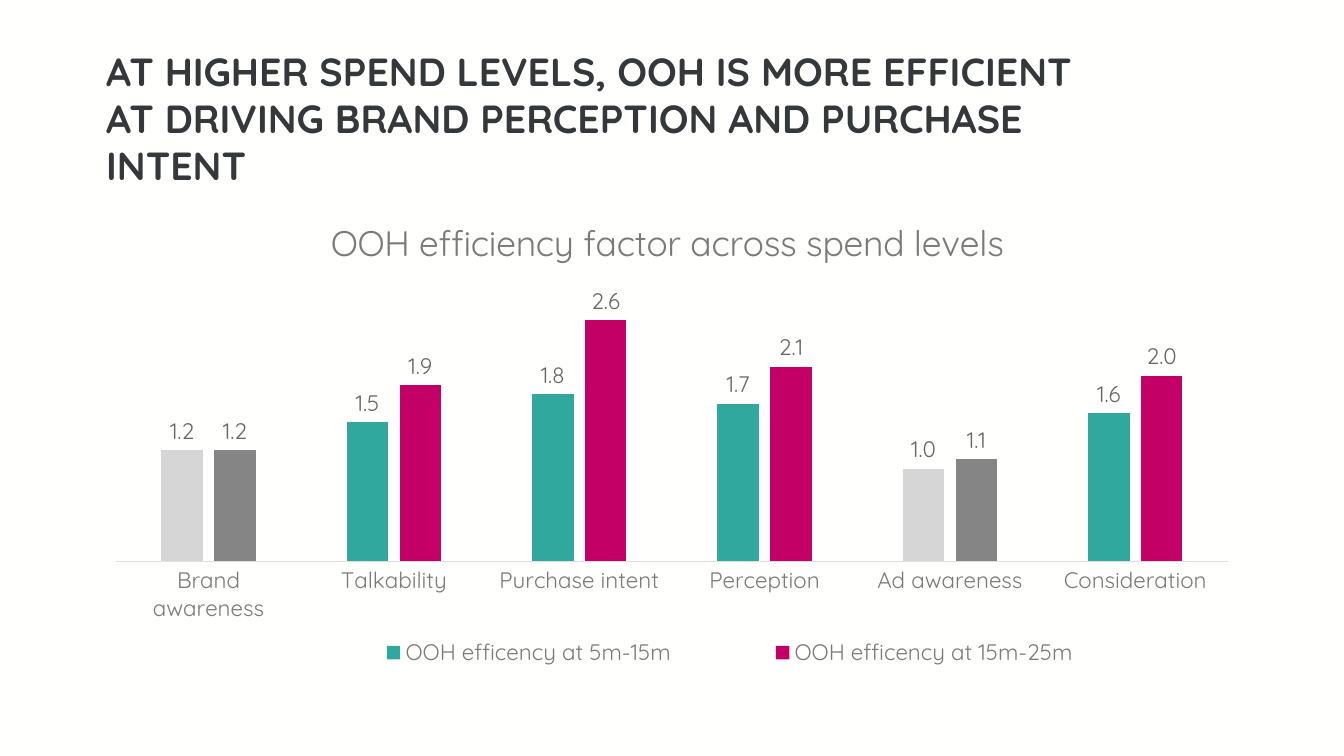
import pptx
import pptx.chart.data
import pptx.dml.color
import pptx.enum.chart
import pptx.enum.text
import pptx.oxml
import pptx.oxml.ns
import pptx.util

Inches = pptx.util.Inches

COLORS = {
    "background": "FFFFFE",
    "heading": "34383A",
    "text": "7A7A7A",
    "label": "666666",
    "axis": "E0E0E0",
    "teal": "31A89E",
    "magenta": "C20066",
    "light": "D6D6D6",
    "dark": "858585",
}
CATEGORIES = ["Brand awareness", "Talkability", "Purchase intent",
              "Perception", "Ad awareness", "Consideration"]
MUTED_POINTS = (0, 4)
SERIES = [
    ("OOH efficency at 5m-15m", [1.2, 1.5, 1.8, 1.7, 1.0, 1.6], "teal", "light"),
    ("OOH efficency at 15m-25m", [1.2, 1.9, 2.6, 2.1, 1.1, 2.0], "magenta", "dark"),
]


class SlideBuilder:
    """Holds the style and the current slide, and adds each kind of element."""

    def __init__(self, slide, typeface):
        self.slide = slide
        self.typeface = typeface

    def apply(self, target, values):
        for name, value in values.items():
            setattr(target, name, value)

    def rgb(self, color):
        return pptx.dml.color.RGBColor.from_string(COLORS[color])

    def fill(self, target, color):
        target.solid()
        target.fore_color.rgb = self.rgb(color)

    def style(self, font, size, color, bold=False):
        self.apply(font, {"name": self.typeface, "size": pptx.util.Pt(size), "bold": bold})
        font.color.rgb = self.rgb(color)

    def title(self, text, left, top, width, height):
        box = self.slide.shapes.title
        self.apply(box, {"left": Inches(left), "top": Inches(top),
                         "width": Inches(width), "height": Inches(height)})
        frame = box.text_frame
        frame.text = text
        self.apply(frame, {"word_wrap": True,
                           "auto_size": pptx.enum.text.MSO_AUTO_SIZE.NONE,
                           "vertical_anchor": pptx.enum.text.MSO_ANCHOR.TOP})
        para = frame.paragraphs[0]
        para.alignment = pptx.enum.text.PP_ALIGN.LEFT
        self.style(para.runs[0].font, 21, "heading", True)

    def place(self, chart, part, index, **position):
        element = chart.element.xpath(f"c:chart//c:{part}")[0]
        for old in element.xpath("c:layout"):
            element.remove(old)
        target = '<c:layoutTarget val="inner"/>' if part == "plotArea" else ""
        modes = "".join(f'<c:{axis}Mode val="edge"/>' for axis in "xy")
        values = "".join(f'<c:{name} val="{value}"/>' for name, value in position.items())
        element.insert(index, pptx.oxml.parse_xml(
            f'<c:layout {pptx.oxml.ns.nsdecls("c")}><c:manualLayout>'
            f"{target}{modes}{values}</c:manualLayout></c:layout>"))

    def column_chart(self, title, left, top, width, height):
        data = pptx.chart.data.CategoryChartData(number_format="0.0")
        data.categories = CATEGORIES
        for name, values, color, muted in SERIES:
            data.add_series(name, values)
        chart = self.slide.shapes.add_chart(
            pptx.enum.chart.XL_CHART_TYPE.COLUMN_CLUSTERED,
            Inches(left), Inches(top), Inches(width), Inches(height), data).chart
        self.style(chart.font, 10, "text")

        chart.has_title = True
        frame = chart.chart_title.text_frame
        frame.text = title
        self.style(frame.paragraphs[0].runs[0].font, 19, "text")

        chart.has_legend = True
        self.apply(chart.legend, {"position": pptx.enum.chart.XL_LEGEND_POSITION.BOTTOM,
                                  "include_in_layout": False})
        self.style(chart.legend.font, 12, "text")

        self.apply(chart.value_axis, {"visible": False, "has_major_gridlines": False,
                                      "minimum_scale": 0, "maximum_scale": 3})
        axis = chart.category_axis
        axis.major_tick_mark = pptx.enum.chart.XL_TICK_MARK.NONE
        self.style(axis.tick_labels.font, 12, "text")
        axis.format.line.width = pptx.util.Pt(0.75)
        self.fill(axis.format.line.fill, "axis")

        plot = chart.plots[0]
        self.apply(plot, {"gap_width": 219, "overlap": -27, "vary_by_categories": False})
        for series, (name, values, color, muted) in zip(plot.series, SERIES):
            self.fill(series.format.fill, color)
            for index in MUTED_POINTS:
                self.fill(series.points[index].format.fill, muted)
            labels = series.data_labels
            self.apply(labels, {"show_value": True, "number_format": "0.0",
                                "number_format_is_linked": False,
                                "position": pptx.enum.chart.XL_LABEL_POSITION.OUTSIDE_END})
            self.style(labels.font, 12, "label")

        self.place(chart, "title", 1, x=0.2, y=0.02)
        self.place(chart, "plotArea", 0, x=0.02, y=0.17, w=0.96, h=0.58)
        self.place(chart, "legend", 1, x=0.17, y=0.9, w=0.76, h=0.08)


def main():
    deck = pptx.Presentation()
    deck.slide_width = Inches(10)
    deck.slide_height = deck.slide_width * 9 // 16
    slide = deck.slides.add_slide(deck.slide_layouts[5])
    builder = SlideBuilder(slide, "Quicksand")
    builder.fill(slide.background.fill, "background")
    builder.column_chart("OOH efficiency factor across spend levels", 0.69, 1.5, 8.62, 3.57)
    builder.title("AT HIGHER SPEND LEVELS, OOH IS MORE EFFICIENT AT DRIVING BRAND "
                  "PERCEPTION AND PURCHASE INTENT", 0.69, 0.3, 7.76, 1.09)
    deck.save("out.pptx")


if __name__ == "__main__":
    main()
